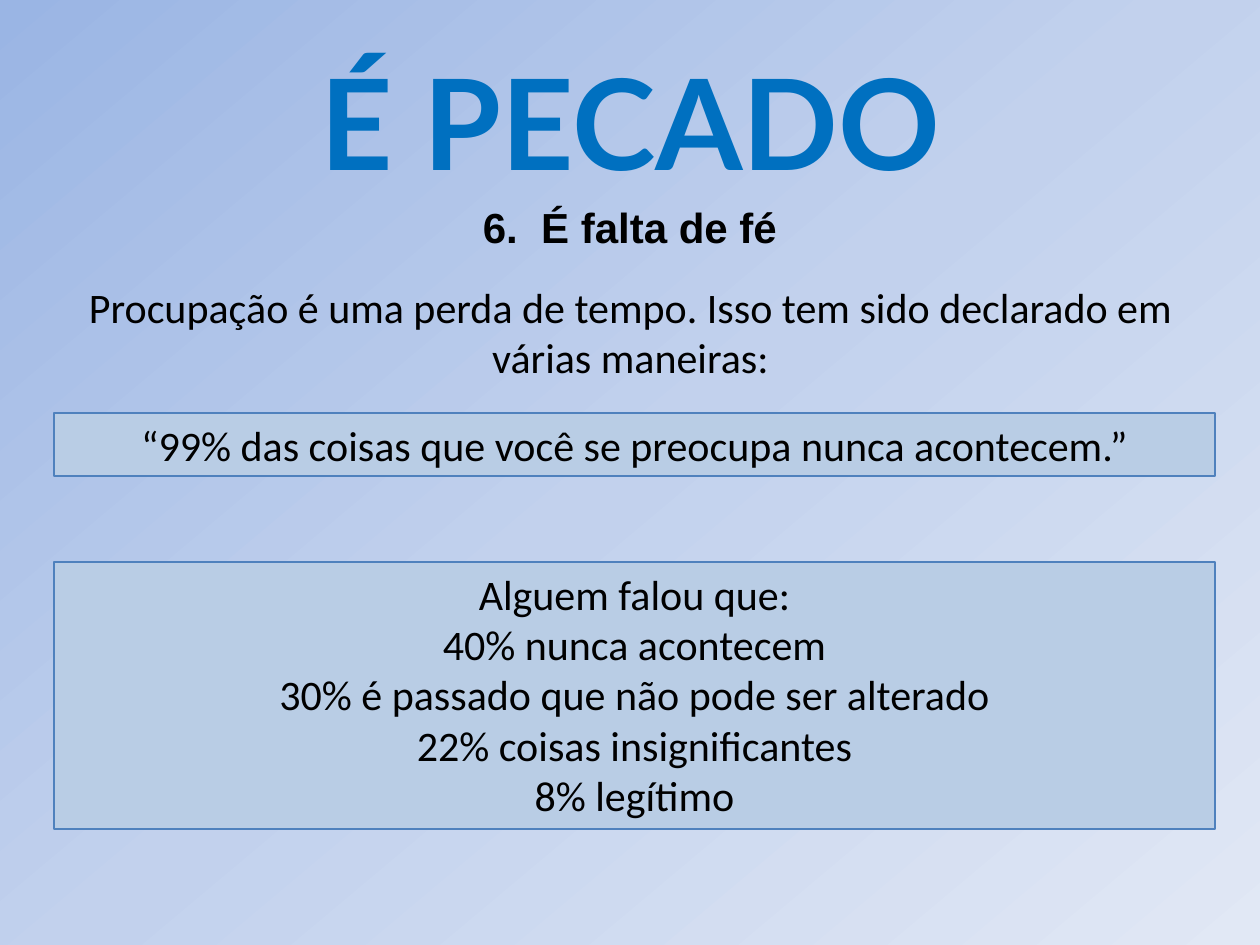
from copy import deepcopy
from dataclasses import dataclass

from pptx import Presentation
from pptx import util as u
from pptx.dml.color import RGBColor
from pptx.enum import shapes, text
from pptx.oxml.ns import qn

SCALE = 914400 / 126  # EMU per px
COLORS = {
    "title": "0070C0", "ink": "000000", "panel": "B9CDE5", "edge": "4F81BD",
    "sky": "9AB5E4", "mid": "C2D1ED", "pale": "E1E8F5",
}


@dataclass
class Box:
    left: int
    top: int
    width: int
    height: int

    def emu(self) -> list[u.Emu]:
        sides = (self.left, self.top, self.width, self.height)
        return [u.Emu(round(n * SCALE)) for n in sides]


@dataclass
class Panel:
    top: int
    height: int
    paras: list[str]


def color(name: str) -> RGBColor:
    return RGBColor.from_string(COLORS[name])


def write(shape, *paras: str, font: str = "Calibri", size: int = 24,
          ink: str = "ink", bold: bool = False, middle: bool = False) -> None:
    frame = shape.text_frame
    frame.word_wrap = True
    frame.vertical_anchor = text.MSO_ANCHOR.MIDDLE if middle else text.MSO_ANCHOR.TOP
    for i, line in enumerate(paras):
        para = frame.add_paragraph() if i else frame.paragraphs[0]
        para.text = line
        para.alignment = text.PP_ALIGN.CENTER
        for run in para.runs:
            run.font.name = font
            run.font.size = u.Pt(size)
            run.font.bold = bold
            run.font.color.rgb = color(ink)


def label(slide, box: Box, line: str, **style) -> None:
    write(slide.shapes.add_textbox(*box.emu()), line, **style)


def draw(slide, panel: Panel) -> None:
    box = Box(54, panel.top, 1161, panel.height)
    shape = slide.shapes.add_shape(shapes.MSO_SHAPE.RECTANGLE, *box.emu())
    shape.shadow.inherit = False
    shape.fill.solid()
    shape.fill.fore_color.rgb = color("panel")
    shape.line.color.rgb = color("edge")
    shape.line.width = u.Pt(0.75)
    write(shape, *panel.paras)
    shape.text_frame.auto_size = text.MSO_AUTO_SIZE.SHAPE_TO_FIT_TEXT


def paint(slide) -> None:
    fill = slide.background.fill
    fill.gradient()
    fill.gradient_angle = 310  # counter-clockwise
    stops = slide.element.find(".//" + qn("a:gsLst"))
    stops.insert(1, deepcopy(stops[0]))
    for stop, name, place in zip(fill.gradient_stops, ("sky", "mid", "pale"), (0, 0.5, 1)):
        stop.color.rgb = color(name)
        stop.position = place


def main() -> None:
    deck = Presentation()
    deck.slide_width, deck.slide_height = u.Inches(10), u.Inches(7.5)
    slide = deck.slides.add_slide(deck.slide_layouts[6])
    paint(slide)

    # Headings and introduction
    label(slide, Box(25, 26, 1211, 189), "É PECADO",
          font="Lato", size=72, ink="title", bold=True, middle=True)
    label(slide, Box(63, 195, 1134, 83), "6.  É falta de fé", font="Arial", bold=True)
    label(slide, Box(35, 275, 1191, 670),
          "Procupação é uma perda de tempo. Isso tem sido declarado em várias maneiras:")

    # Quoted statements
    panels = [
        Panel(413, 63, ["“99% das coisas que você se preocupa nunca acontecem.”"]),
        Panel(562, 267, [
            "Alguem falou que:",
            "40% nunca acontecem\n30% é passado que não pode ser alterado\n"
            "22% coisas insignificantes\n8% legítimo",
        ]),
    ]
    for panel in panels:
        draw(slide, panel)

    deck.save("out.pptx")


if __name__ == "__main__":
    main()
